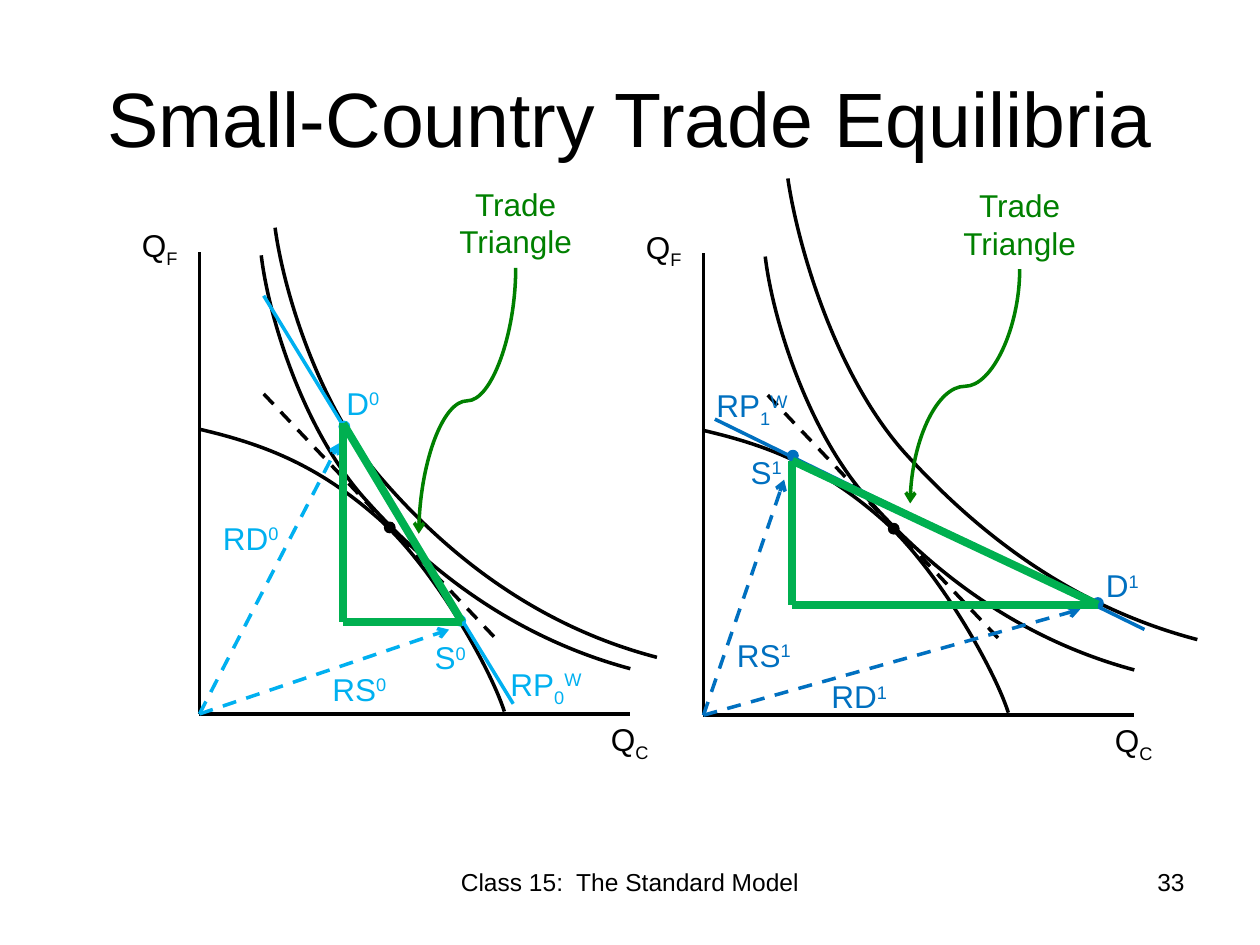
from lxml import etree
from pptx import Presentation
from pptx.dml.color import RGBColor
from pptx.enum.dml import MSO_LINE
from pptx.enum.shapes import MSO_CONNECTOR, MSO_SHAPE
from pptx.enum.text import MSO_ANCHOR, PP_ALIGN
from pptx.oxml.ns import qn
from pptx.util import Pt

STRAIGHT, CURVE = MSO_CONNECTOR.STRAIGHT, MSO_CONNECTOR.CURVE
OVAL, DASH, MIDDLE = MSO_SHAPE.OVAL, MSO_LINE.DASH, MSO_ANCHOR.MIDDLE
LEFT, CENTER, RIGHT = PP_ALIGN.LEFT, PP_ALIGN.CENTER, PP_ALIGN.RIGHT

COLORS = {"black": "000000", "sky": "00B0F0", "blue": "0070C0",
          "triangle": "00B050", "note": "008000"}
BASELINES = {"": None, "sub": "-25000", "super": "30000"}
DOT = 6

# Diagram points are measured from each panel's origin, x to the right and y up.
# Each curve is a chain of two cubic Bézier segments.
AUTARKY_INDIFFERENCE = [(246.2, 25.9), (179.3, 43.9), (130.3, 82.8), (95, 122.4),
                        (59.8, 161.3), (39.6, 226.1), (35.3, 262.1)]
PRODUCTION_FRONTIER = [(0, 162.7), (40.3, 153.4), (69.1, 140.4), (100.8, 113),
                       (131.8, 86.4), (165.6, 28.1), (174.2, 1.4)]
PANELS = [
    {
        "origin": (114, 408), "color": "sky", "index": "0",
        "trade_indifference": [(261.4, 32.4), (192.2, 50.4), (141.8, 91.4), (105.8, 132.5),
                               (69.1, 173.5), (48.2, 240.5), (43.2, 277.9)],
        "price_line": [(36.7, 239), (179.3, 5.8)],
        "dots": [(149, 53.3), (82.8, 164.2)],
        "rays": [(79.9, 154.8), (142.6, 48.2)],
        "triangle": [(82.1, 52.7), (150, 52.7), (82.1, 166)],
        "labels": {"S": (127.2, 46.8), "D": (76.8, 192.2), "RD": (6.3, 115.2),
                   "RS": (68.8, 28.8), "RP": (170.6, 31.7)},
        "pointer_end": (125.3, 103),
    },
    {
        "origin": (402, 408.7), "color": "blue", "index": "1",
        "trade_indifference": [(282.2, 43.2), (208.1, 62.6), (154.1, 106.6), (114.5, 150.5),
                               (75.6, 194.4), (54, 267.1), (48.2, 306.7)],
        "price_line": [(6.5, 169.2), (252, 49)],
        "dots": [(51.1, 148.3), (225.4, 64.1)],
        "rays": [(215.3, 60.5), (46.1, 134.6)],
        "triangle": [(50.8, 63.2), (225.4, 63.2), (50.8, 145.4)],
        "labels": {"S": (19.8, 153.4), "D": (222.8, 88.6), "RD": (66, 25.2),
                   "RS": (12, 49), "RP": (0.3, 191.5)},
        "pointer_end": (118.1, 121),
    },
]
POINTER_START = (180.7, 254.9)


def add_text(shapes, box, runs, color="black", size=18, align=LEFT):
    """Add a text box; runs are (text, baseline name) pairs."""
    shape = shapes.add_textbox(*[Pt(length) for length in box])
    shape.text_frame.word_wrap = True
    paragraph = shape.text_frame.paragraphs[0]
    paragraph.alignment = align
    for text, baseline in runs:
        run = paragraph.add_run()
        run.text = text
        run.font.name = "Arial"
        run.font.size = Pt(size)
        run.font.color.rgb = RGBColor.from_string(COLORS[color])
        if BASELINES[baseline]:
            run._r.get_or_add_rPr().set("baseline", BASELINES[baseline])


def add_line(shapes, origin, start, end, color="black", width=2, dashed=False,
             arrow=False, kind=STRAIGHT):
    """Add a connector between two points of a panel."""
    (x1, y1), (x2, y2) = [(origin[0] + x, origin[1] - y) for x, y in (start, end)]
    line = shapes.add_connector(kind, Pt(x1), Pt(y1), Pt(x2), Pt(y2))
    line.line.color.rgb = RGBColor.from_string(COLORS[color])
    line.line.width = Pt(width)
    if dashed:
        line.line.dash_style = DASH
    if arrow:
        etree.SubElement(line.line._get_or_add_ln(), qn("a:tailEnd"), type="arrow")
    etree.SubElement(line._element.spPr, qn("a:effectLst"))
    return line


presentation = Presentation()
presentation.slide_width, presentation.slide_height = Pt(720), Pt(540)
slide = presentation.slides.add_slide(presentation.slide_layouts[5])
shapes = slide.shapes

title = shapes.title
title.left, title.top, title.width, title.height = Pt(36), Pt(21.6), Pt(648), Pt(90)
title.text_frame.vertical_anchor = MIDDLE
paragraph = title.text_frame.paragraphs[0]
paragraph.alignment = CENTER
run = paragraph.add_run()
run.text = "Small-Country Trade Equilibria"
run.font.name = "Arial"
run.font.size = Pt(44)
run.font.color.rgb = RGBColor.from_string(COLORS["black"])

for panel in PANELS:
    origin, color, index = panel["origin"], panel["color"], panel["index"]
    left, bottom = origin

    for curve in (panel["trade_indifference"], AUTARKY_INDIFFERENCE, PRODUCTION_FRONTIER):
        points = [(Pt(left + x), Pt(bottom - y)) for x, y in curve]
        builder = shapes.build_freeform(*points[0])
        builder.add_line_segments(points[1:], close=False)
        shape = builder.convert_to_shape()
        # Every three line segments become one cubic Bézier segment.
        segments = list(shape._element.spPr.iter(qn("a:lnTo")))
        for first in (0, 3):
            bezier = etree.Element(qn("a:cubicBezTo"))
            segments[first].addprevious(bezier)
            for segment in segments[first:first + 3]:
                bezier.append(segment[0])
                segment.getparent().remove(segment)
        shape.shadow.inherit = False
        shape.fill.background()
        shape.line.color.rgb = RGBColor.from_string(COLORS["black"])
        shape.line.width = Pt(2)

    add_line(shapes, origin, (0, 0), (246.2, 0))
    add_line(shapes, origin, (0, 0), (0, 264.2))
    add_line(shapes, origin, (36.7, 182.9), (169.2, 43.2), dashed=True)
    add_line(shapes, origin, *panel["price_line"], color)
    for ray_end in panel["rays"]:
        add_line(shapes, origin, (0, 0), ray_end, color, dashed=True, arrow=True)

    dots = [((108.7, 106.6), "black")] + [(center, color) for center in panel["dots"]]
    for (x, y), dot_color in dots:
        dot = shapes.add_shape(OVAL, Pt(left + x - DOT / 2), Pt(bottom - y - DOT / 2),
                               Pt(DOT), Pt(DOT))
        dot.shadow.inherit = False
        dot.fill.solid()
        dot.fill.fore_color.rgb = RGBColor.from_string(COLORS[dot_color])
        dot.line.color.rgb = RGBColor.from_string(COLORS[dot_color])
        dot.line.width = Pt(0.75)

    for letter, (x, y) in {"C": (228, 0), "F": (-40, 282.2)}.items():
        add_text(shapes, (left + x, bottom - y, 54, 28.8), [("Q", ""), (letter, "sub")])
    for name, (x, y) in panel["labels"].items():
        runs = [(name, ""), (index, "super")]
        if name == "RP":
            runs = [(name, ""), (index, "sub"), ("W", "super")]
        add_text(shapes, (left + x, bottom - y, 68 if name == "RP" else 54, 28.8), runs, color)

    corner, far, top = panel["triangle"]
    triangle = shapes.add_group_shape()
    for start, end in ((corner, top), (corner, far), (far, top)):
        add_line(triangle.shapes, origin, start, end, "triangle", 4.5)

    add_text(shapes, (left + 129.2, bottom - 306, 103, 51.1), [("Trade Triangle", "")],
             "note", align=CENTER)
    pointer = add_line(shapes, origin, POINTER_START, panel["pointer_end"], "note",
                       arrow=True, kind=CURVE)
    # Turn the curve a quarter so that it leaves and arrives vertically.
    center_x, center_y = pointer.left + pointer.width // 2, pointer.top + pointer.height // 2
    pointer.width, pointer.height = pointer.height, pointer.width
    pointer.left, pointer.top = center_x - pointer.width // 2, center_y - pointer.height // 2
    transform = pointer._element.spPr.find(qn("a:xfrm"))
    transform.set("rot", "5400000")
    transform.attrib.pop("flipH", None)

add_text(shapes, (246, 491.8, 228, 37.4), [("Class 15:  The Standard Model", "")],
         size=14, align=CENTER)
add_text(shapes, (516, 491.8, 168, 37.4), [("33", "")], size=14, align=RIGHT)

presentation.save("out.pptx")
